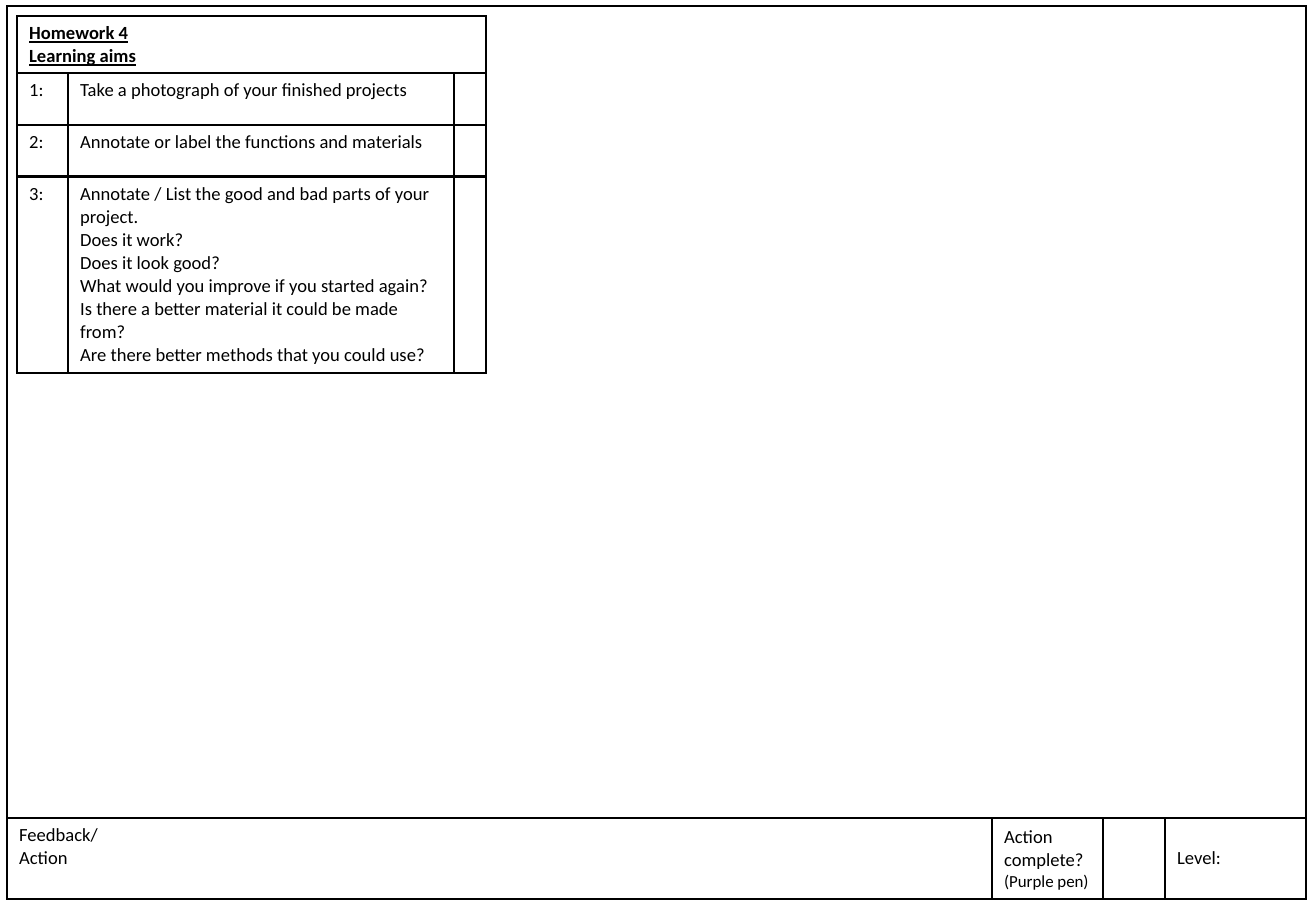
from pptx import Presentation
from pptx import util as u
from pptx.dml.color import RGBColor
from pptx.enum import text
from pptx.oxml import parse_xml
from pptx.oxml.ns import nsdecls

SCALE = 914400 / 121.5
COLOURS = {"ink": "000000", "paper": "FFFFFF"}
INK = RGBColor.from_string(COLOURS["ink"])


def px(length):
    return u.Emu(round(length * SCALE))


def add_grid(left, top, widths, heights, rows, filled=False):
    frame = page.shapes.add_table(
        len(heights), len(widths), px(left), px(top), px(sum(widths)), px(sum(heights))
    )
    table = frame.table
    table.first_row = False
    table.horz_banding = False
    for column, width in zip(table.columns, widths):
        column.width = px(width)
    for row, height in zip(table.rows, heights):
        row.height = px(height)
    for row, wording in zip(table.rows, rows):
        for cell, words in zip(row.cells, wording):
            cell.text_frame.text = words
            for para in cell.text_frame.paragraphs:
                para.font.size = u.Pt(11)
                for span in para.runs:
                    span.font.size = u.Pt(11)
                    span.font.name = "Calibri"
                    span.font.color.rgb = INK
            if filled:
                cell.fill.solid()
                cell.fill.fore_color.rgb = RGBColor.from_string(COLOURS["paper"])
            else:
                cell.fill.background()
            properties = cell._tc.get_or_add_tcPr()
            for index, side in enumerate(("lnL", "lnR", "lnT", "lnB")):
                border = parse_xml(
                    f'<a:{side} {nsdecls("a")} w="12700"><a:solidFill>'
                    f'<a:srgbClr val="{COLOURS["ink"]}"/></a:solidFill></a:{side}>'
                )
                properties.insert(index, border)
    return table


deck = Presentation()
deck.slide_width = px(1316)
deck.slide_height = px(911)
page = deck.slides.add_slide(deck.slide_layouts[6])

sheet = add_grid(
    7, 6, [985, 111, 62, 141], [812, 81],
    [["", "", "", ""],
     ["Feedback/\nAction", "Action complete?\n(Purple pen)", "", "Level:"]],
)
sheet.cell(0, 0).merge(sheet.cell(0, 3))
for column in (1, 3):
    sheet.cell(1, column).vertical_anchor = text.MSO_ANCHOR.MIDDLE
sheet.cell(1, 1).text_frame.paragraphs[1].runs[0].font.size = u.Pt(10)

heading = add_grid(17, 16, [469], [160], [["Homework 4\nLearning aims"]], filled=True)
for para in heading.cell(0, 0).text_frame.paragraphs:
    para.runs[0].font.bold = True
    para.runs[0].font.underline = True

questions = [
    "Annotate / List the good and bad parts of your project.",
    "Does it work?",
    "Does it look good?",
    "What would you improve if you started again?",
    "Is there a better material it could be made from?",
    "Are there better methods that you could use?",
]
aims = [
    "Take a photograph of your finished projects",
    "Annotate or label the functions and materials",
    "\n".join(questions),
]
add_grid(
    17, 73, [51, 386, 32], [52, 52, 196],
    [[f"{number}:", aim, ""] for number, aim in enumerate(aims, 1)],
)

deck.save("out.pptx")
